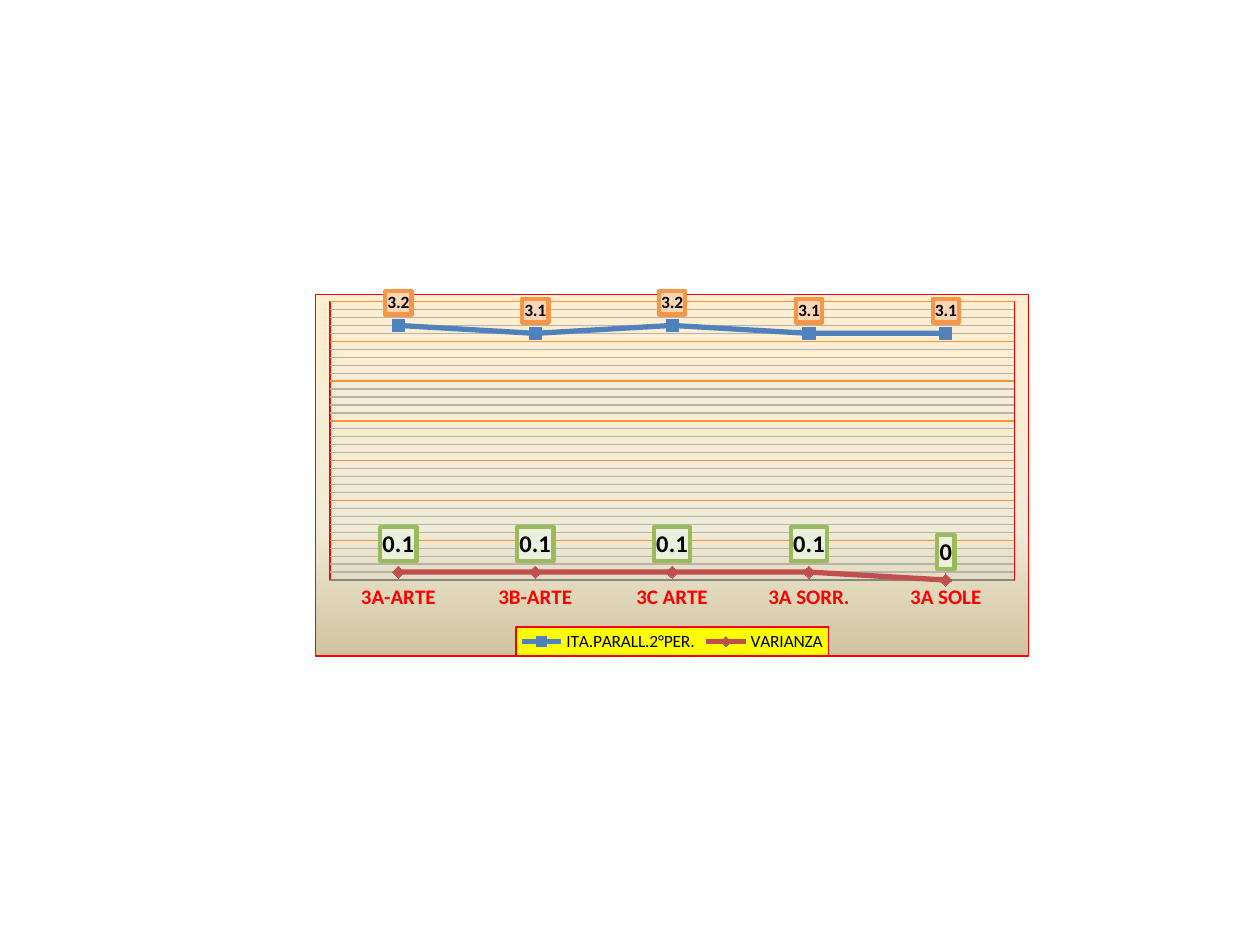
import dataclasses

import pptx
import pptx.chart.data
import pptx.dml.color
import pptx.enum.chart
import pptx.oxml
import pptx.util

Cm = pptx.util.Cm
Pt = pptx.util.Pt
charts = pptx.enum.chart


@dataclasses.dataclass(frozen=True)
class Theme:
    font: str = "Calibri"
    text: str = "000000"
    accent: str = "FF0000"
    legend: str = "FFFF00"
    major_grid: str = "F69240"
    minor_grid: str = "B3B3B3"
    axis: str = "868686"
    background: tuple = ((0, "FFEFD1"), (65, "F0EBD5"), (100, "D1C39F"))
    body_size: float = 10
    category_size: float = 12
    variance_size: float = 14


THEME = Theme()
CATEGORIES = ("3A-ARTE", "3B-ARTE", "3C ARTE", "3A SORR.", "3A SOLE")
SERIES = (
    dict(name="ITA.PARALL.2°PER.", values=(3.2, 3.1, 3.2, 3.1, 3.1),
         color="4F81BD", marker=charts.XL_MARKER_STYLE.SQUARE,
         size=THEME.body_size, label_fill="FCD5B5", label_line="F79646"),
    dict(name="VARIANZA", values=(0.1, 0.1, 0.1, 0.1, 0),
         color="C0504D", marker=charts.XL_MARKER_STYLE.DIAMOND,
         size=THEME.variance_size, label_fill="EBF1DE", label_line="9BBB59"),
)


def apply(target, values):
    for name, value in values.items():
        setattr(target, name, value)


def rgb(color):
    return pptx.dml.color.RGBColor.from_string(color)


def style_font(font, size, color=THEME.text, bold=False):
    apply(font, dict(name=THEME.font, size=Pt(size), bold=bold))
    font.color.rgb = rgb(color)


def style_line(line, color, width):
    line.color.rgb = rgb(color)
    line.width = Pt(width)


def chart_xml(tag, content):
    """Parse a chart element with the namespaces it needs."""
    return pptx.oxml.parse_xml(
        f'<c:{tag} xmlns:c="http://schemas.openxmlformats.org/drawingml/2006/chart"'
        ' xmlns:a="http://schemas.openxmlformats.org/drawingml/2006/main">'
        f"{content}</c:{tag}>")


def solid(color):
    return f'<a:solidFill><a:srgbClr val="{color}"/></a:solidFill>'


def vertical_gradient(stops):
    marks = "".join(f'<a:gs pos="{percent * 1000}"><a:srgbClr val="{color}"/></a:gs>'
                    for percent, color in stops)
    return f'<a:gradFill><a:gsLst>{marks}</a:gsLst><a:lin ang="5400000" scaled="0"/></a:gradFill>'


def frame(fill, border, width):
    """Shape properties for chart parts without a public format object."""
    return chart_xml("spPr", f'{fill}<a:ln w="{int(Pt(width))}">{solid(border)}</a:ln>')


def add_frame(element, fill, border, width):
    element.find("{*}txPr").addprevious(frame(fill, border, width))


def place_plot(chart, **fractions):
    """Fix the inner plot area as fractions of the chart and outline it."""
    plot_area = chart.element.find(".//{*}plotArea")
    for layout in plot_area.findall("{*}layout"):
        plot_area.remove(layout)
    modes = '<c:layoutTarget val="inner"/><c:xMode val="edge"/><c:yMode val="edge"/>'
    values = "".join(f'<c:{key} val="{value}"/>' for key, value in fractions.items())
    plot_area.insert(0, chart_xml("layout", f"<c:manualLayout>{modes}{values}</c:manualLayout>"))
    plot_area.append(frame("<a:noFill/>", THEME.accent, 0.75))


def style_axes(chart):
    scores = chart.value_axis
    apply(scores, dict(visible=False, minimum_scale=0, maximum_scale=3.5,
                       major_unit=0.5, minor_unit=0.1,
                       has_major_gridlines=True, has_minor_gridlines=True))
    style_line(scores.major_gridlines.format.line, THEME.major_grid, 0.75)
    minor_gridlines = scores._element.find("{*}minorGridlines")
    minor_gridlines.append(frame("", THEME.minor_grid, 0.75))
    classes = chart.category_axis
    apply(classes, dict(major_tick_mark=charts.XL_TICK_MARK.NONE,
                        minor_tick_mark=charts.XL_TICK_MARK.NONE))
    style_font(classes.tick_labels.font, THEME.category_size, THEME.accent, True)
    style_line(classes.format.line, THEME.axis, 0.75)


def style_series(series, look):
    series.smooth = False
    style_line(series.format.line, look["color"], 3)
    marker = series.marker
    apply(marker, dict(style=look["marker"], size=7))
    marker.format.fill.solid()
    marker.format.fill.fore_color.rgb = rgb(look["color"])
    style_line(marker.format.line, look["color"], 0.75)
    labels = series.data_labels
    apply(labels, dict(show_value=True, position=charts.XL_LABEL_POSITION.ABOVE))
    style_font(labels.font, look["size"], bold=True)
    add_frame(labels._element, solid(look["label_fill"]), look["label_line"], 2.5)


def style_legend(chart):
    chart.has_legend = True
    legend = chart.legend
    apply(legend, dict(position=charts.XL_LEGEND_POSITION.BOTTOM, include_in_layout=False))
    style_font(legend.font, THEME.body_size)
    add_frame(legend._element, solid(THEME.legend), THEME.accent, 0.75)


def add_score_chart(page):
    data = pptx.chart.data.CategoryChartData()
    data.categories = CATEGORIES
    for look in SERIES:
        data.add_series(look["name"], look["values"])
    chart = page.shapes.add_chart(charts.XL_CHART_TYPE.LINE_MARKERS, Cm(6.35), Cm(5.82),
                                  Cm(14.4), Cm(7.42), data).chart
    chart.has_title = False
    style_font(chart.font, THEME.body_size)
    add_frame(chart.element, vertical_gradient(THEME.background), THEME.accent, 0.75)
    chart.plots[0].vary_by_categories = False
    place_plot(chart, x=0.02, y=0.02, w=0.96, h=0.77)
    style_axes(chart)
    for series, look in zip(chart.series, SERIES):
        style_series(series, look)
    style_legend(chart)


def main():
    deck = pptx.Presentation()
    apply(deck, dict(slide_width=Cm(25.4), slide_height=Cm(19.05)))
    page = deck.slides.add_slide(deck.slide_layouts[6])
    add_score_chart(page)
    deck.save("out.pptx")


if __name__ == "__main__":
    main()
